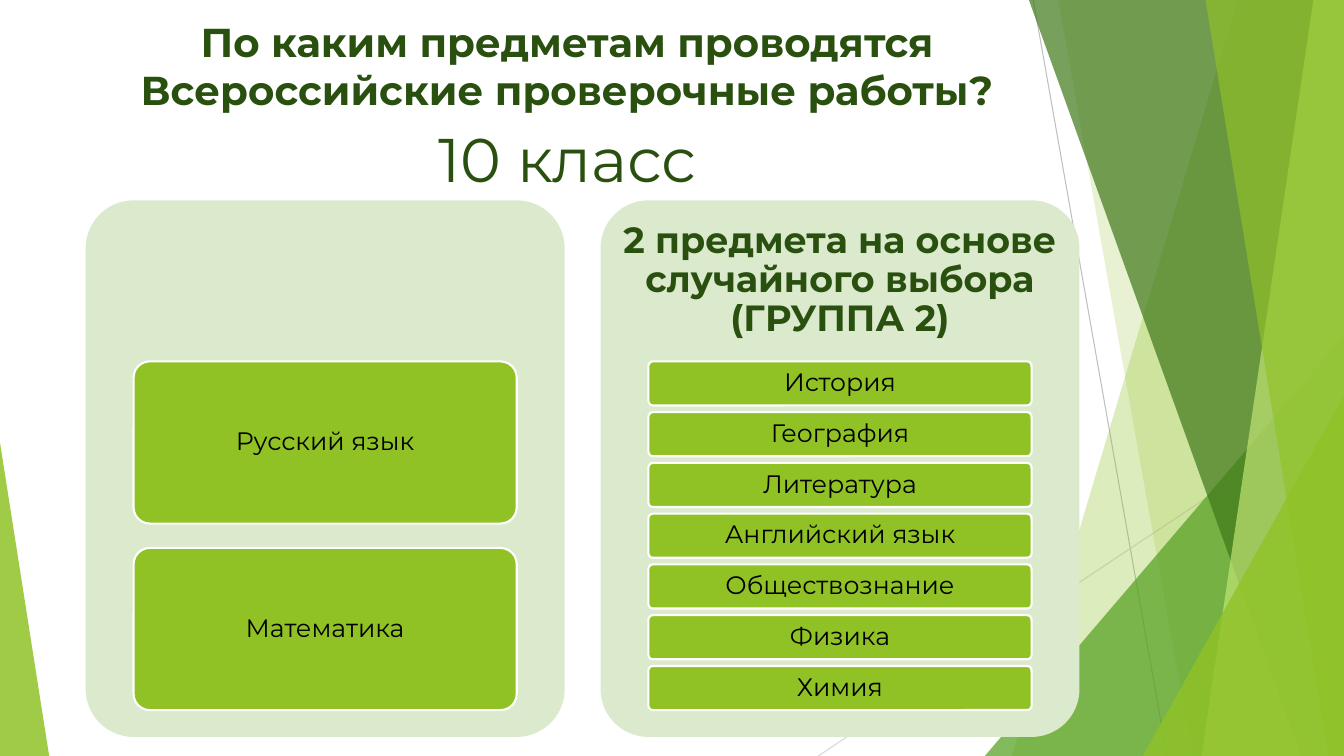
from lxml import etree
from pptx import Presentation
from pptx.dml.color import RGBColor
from pptx.enum.shapes import MSO_CONNECTOR, MSO_SHAPE
from pptx.enum.text import MSO_ANCHOR, PP_ALIGN
from pptx.oxml.ns import qn
from pptx.util import Cm, Pt

STRAIGHT = MSO_CONNECTOR.STRAIGHT
ROUND = MSO_SHAPE.ROUNDED_RECTANGLE
TRIANGLE = MSO_SHAPE.ISOSCELES_TRIANGLE
CENTER = PP_ALIGN.CENTER
TOP, MIDDLE = MSO_ANCHOR.TOP, MSO_ANCHOR.MIDDLE

WIDE, HIGH = 33.87, 19.05
FONT = "Montserrat"
DARK, LIME, PALE = "2A5010", "90C226", "DBE9CD"
WHITE, BLACK = "FFFFFF", "000000"

# Top left, top right, bottom right, bottom left; colour, opacity in %
BANDS = [
    (31.19, WIDE, WIDE, 25.5, LIME, 30),
    (26.67, WIDE, WIDE, 30.05, LIME, 20),
    (25.93, WIDE, WIDE, 32.79, "3F7819", 70),
    (33.1, WIDE, WIDE, 30.28, "C0E474", 70),
    (30.38, WIDE, WIDE, 33.48, LIME, 65),
]
# Left, top, width; apex position, colour, opacity in %
WEDGES = [
    (24.82, 8.46, 9.05, 1, "54A021", 72),
    (28.8, 9.98, 5.07, 1, LIME, 80),
    (0, 11.15, 1.24, 0, LIME, 85),
]


def color(text):
    return RGBColor.from_string(text)


def paint(shape, tone, alpha=100, edge=None):
    shape.shadow.inherit = False
    shape.fill.solid()
    shape.fill.fore_color.rgb = color(tone)
    if alpha < 100:
        node = shape.fill._xPr.find(".//" + qn("a:srgbClr"))
        etree.SubElement(node, qn("a:alpha"), val=str(alpha * 1000))
    if edge:
        shape.line.color.rgb = color(edge)
        shape.line.width = Pt(1.5)
    else:
        shape.line.fill.background()


def write(shape, text, size, tone, bold=False, anchor=MIDDLE, pad=None, space=None):
    frame = shape.text_frame
    frame.word_wrap = True
    frame.vertical_anchor = anchor
    if pad is not None:
        frame.margin_left = frame.margin_right = Cm(pad)
        frame.margin_top = frame.margin_bottom = Cm(pad)
    para = frame.paragraphs[0]
    para.text = text
    para.alignment = CENTER
    para.line_spacing = space
    para.font.name = FONT
    para.font.size = Pt(size)
    para.font.bold = bold
    para.font.color.rgb = color(tone)


def add_label(slide, box, *args, **style):
    label = slide.shapes.add_textbox(*map(Cm, box))
    write(label, *args, **style)


def add_round(slide, box, tone, edge=None):
    shape = slide.shapes.add_shape(ROUND, *map(Cm, box))
    shape.adjustments[0] = 0.1
    paint(shape, tone, edge=edge)
    return shape


def add_line(slide, start, end, tone):
    line = slide.shapes.add_connector(STRAIGHT, *map(Cm, start + end))
    line.line.color.rgb = color(tone)
    line.line.width = Pt(0.75)
    etree.SubElement(line._element.spPr, qn("a:effectLst"))


def add_band(slide, xs, tone, alpha):
    points = [(Cm(x), Cm(y)) for x, y in zip(xs, (0, 0, HIGH, HIGH))]
    path = slide.shapes.build_freeform(*points[0], scale=1.0)
    path.add_line_segments(points[1:], close=True)
    paint(path.convert_to_shape(), tone, alpha)


def add_wedge(slide, left, top, width, apex, tone, alpha):
    box = (left, top, width, HIGH - top)
    wedge = slide.shapes.add_shape(TRIANGLE, *map(Cm, box))
    wedge.adjustments[0] = apex
    paint(wedge, tone, alpha)


def add_decor(slide):
    add_line(slide, (26.04, 0), (29.41, HIGH), "BFBFBF")
    add_line(slide, (WIDE, 10.24), (20.62, HIGH), "D9D9D9")
    # Bands and wedges overlap, so their order matters
    for *xs, tone, alpha in BANDS[:2]:
        add_band(slide, xs, tone, alpha)
    add_wedge(slide, *WEDGES[0])
    for *xs, tone, alpha in BANDS[2:]:
        add_band(slide, xs, tone, alpha)
    for wedge in WEDGES[1:]:
        add_wedge(slide, *wedge)


def add_panel(slide, box, head, items):
    left, top, width, height = box
    add_round(slide, box, PALE)
    if head:
        add_label(slide, (left, top, width, 0.3 * height), head, 26, DARK,
                  bold=True, pad=0.28, space=0.9)
    # Items share 65 % of the height; each gap is 15 % of an item
    count = len(items)
    tall = 0.65 * height / (count + 0.15 * (count - 1))
    for i, item in enumerate(items):
        y = top + 0.3 * height + i * 1.15 * tall
        tile = add_round(slide, (left + 0.1 * width, y, 0.8 * width, tall), LIME, WHITE)
        write(tile, item, 18, BLACK, pad=0.1, space=0.9)


def main():
    deck = Presentation()
    deck.slide_width, deck.slide_height = Cm(WIDE), Cm(HIGH)
    slide = deck.slides.add_slide(deck.slide_layouts[6])
    add_decor(slide)

    # Headings
    add_label(slide, (1.35, 0.3, 25.88, 2.59),
              "По каким предметам проводятся Всероссийские проверочные работы?",
              28.8, DARK, bold=True, anchor=TOP)
    add_label(slide, (8.51, 2.92, 11.58, 2.13), "10 класс", 44, DARK, anchor=TOP)

    # Subject groups
    groups = [
        ("", ["Русский язык", "Математика"]),
        ("2 предмета на основе случайного выбора (ГРУППА 2)",
         ["История", "География", "Литература", "Английский язык",
          "Обществознание", "Физика", "Химия"]),
    ]
    width = 12.07
    for i, (head, items) in enumerate(groups):
        add_panel(slide, (2.16 + i * 1.075 * width, 5.05, width, 13.52), head, items)

    deck.save("out.pptx")


if __name__ == "__main__":
    main()
